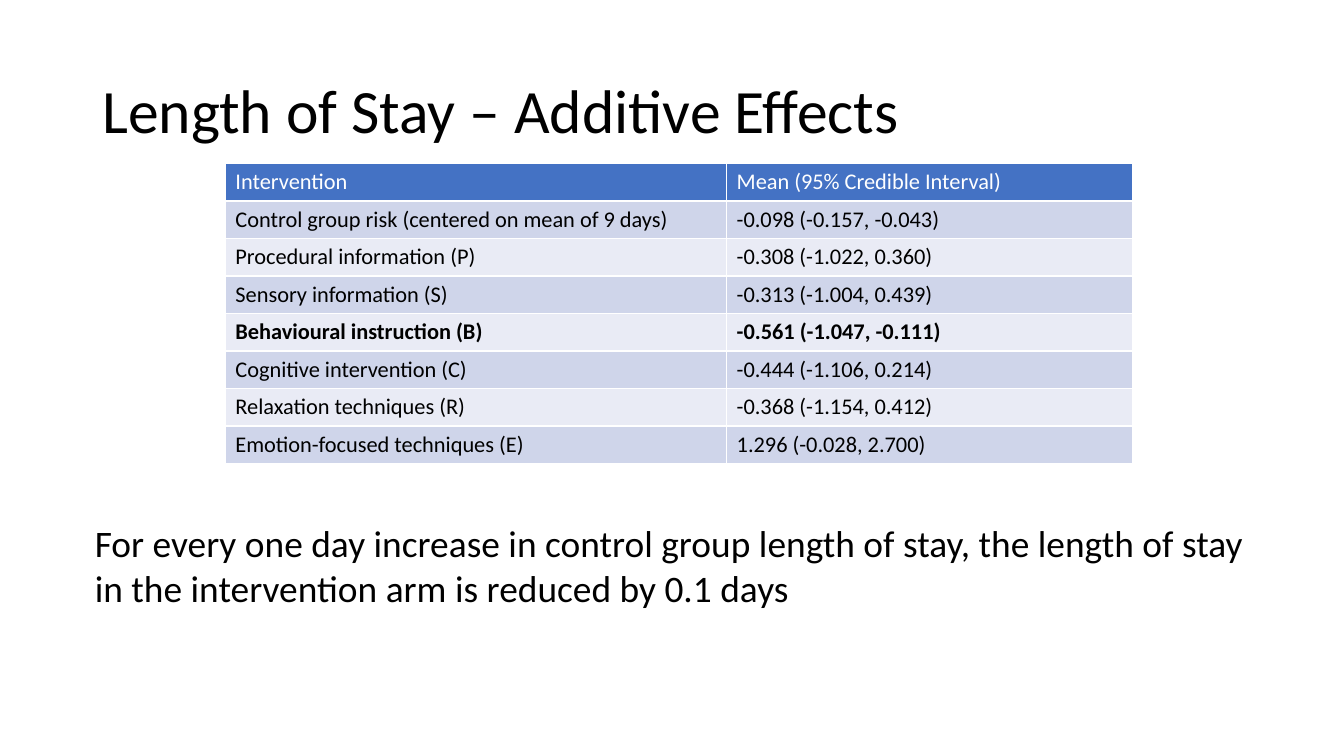
from pptx import Presentation
from pptx.dml.color import RGBColor
from pptx.enum.text import MSO_ANCHOR, MSO_AUTO_SIZE, PP_ALIGN
from pptx.oxml.xmlchemy import OxmlElement
from pptx.util import Pt

FONT = "Calibri"
COLORS = {
    "text": "000000",
    "header_text": "FFFFFF",
    "header": "4472C4",
    "odd_row": "CFD5EA",
    "even_row": "E9EBF5",
}
HEADINGS = ("Intervention", "Mean (95% Credible Interval)")
EFFECTS = [
    ("Control group risk (centered on mean of 9 days)", "-0.098 (-0.157, -0.043)"),
    ("Procedural information (P)", "-0.308 (-1.022, 0.360)"),
    ("Sensory information (S)", "-0.313 (-1.004, 0.439)"),
    ("Behavioural instruction (B)", "-0.561 (-1.047, -0.111)"),
    ("Cognitive intervention (C)", "-0.444 (-1.106, 0.214)"),
    ("Relaxation techniques (R)", "-0.368 (-1.154, 0.412)"),
    ("Emotion-focused techniques (E)", "1.296 (-0.028, 2.700)"),
]
HIGHLIGHTED_ROW = 4
FIRST_COLUMN_SHARE = 0.5525


def add_run(paragraph, text, size, color="text", bold=False):
    run = paragraph.add_run()
    run.text = text
    run.font.name = FONT
    run.font.size = Pt(size)
    run.font.bold = bold
    run.font.color.rgb = RGBColor.from_string(COLORS[color])


def fill_placeholder(holder, box, text, size, anchor):
    """Move a placeholder into the box, write its text and return the paragraph."""
    holder.left, holder.top, holder.width, holder.height = map(Pt, box)
    frame = holder.text_frame
    frame.word_wrap = True
    frame.auto_size = MSO_AUTO_SIZE.NONE
    frame.vertical_anchor = anchor
    paragraph = frame.paragraphs[0]
    paragraph.alignment = PP_ALIGN.LEFT
    add_run(paragraph, text, size)
    return paragraph


def place_title(slide, box):
    heading = fill_placeholder(slide.shapes.title, box,
                               "Length of Stay – Additive Effects", 44, MSO_ANCHOR.MIDDLE)
    heading.line_spacing = 0.9


def place_effects_table(slide, box):
    left, top, width, height = box
    rows = [HEADINGS, *EFFECTS]
    table = slide.shapes.add_table(len(rows), len(HEADINGS), *map(Pt, box)).table
    first_width = width * FIRST_COLUMN_SHARE
    table.columns[0].width = Pt(first_width)
    table.columns[1].width = Pt(width - first_width)
    for index, values in enumerate(rows):
        table.rows[index].height = Pt(height / len(rows))
        band = "header" if index == 0 else "odd_row" if index % 2 else "even_row"
        ink = "header_text" if index == 0 else "text"
        for cell, value in zip(table.rows[index].cells, values):
            cell.fill.solid()
            cell.fill.fore_color.rgb = RGBColor.from_string(COLORS[band])
            add_run(cell.text_frame.paragraphs[0], value, 16, ink,
                    bold=index == HIGHLIGHTED_ROW)


def place_conclusion(slide, box):
    conclusion = fill_placeholder(
        slide.placeholders[1], box,
        "For every one day increase in control group length of stay, the length of stay "
        "in the intervention arm is reduced by 0.1 days",
        26.7, MSO_ANCHOR.TOP)
    conclusion.space_before = Pt(5.3)
    properties = conclusion._p.get_or_add_pPr()
    properties.set("marL", "0")
    properties.set("indent", "0")
    properties.append(OxmlElement("a:buNone"))


def main():
    deck = Presentation()
    deck.slide_width, deck.slide_height = Pt(960), Pt(540)
    slide = deck.slides.add_slide(deck.slide_layouts[1])
    place_title(slide, (66, 28.8, 828, 104.4))
    place_effects_table(slide, (161, 116.8, 648, 214))
    place_conclusion(slide, (60.5, 368, 852, 128))
    deck.save("out.pptx")


if __name__ == "__main__":
    main()
